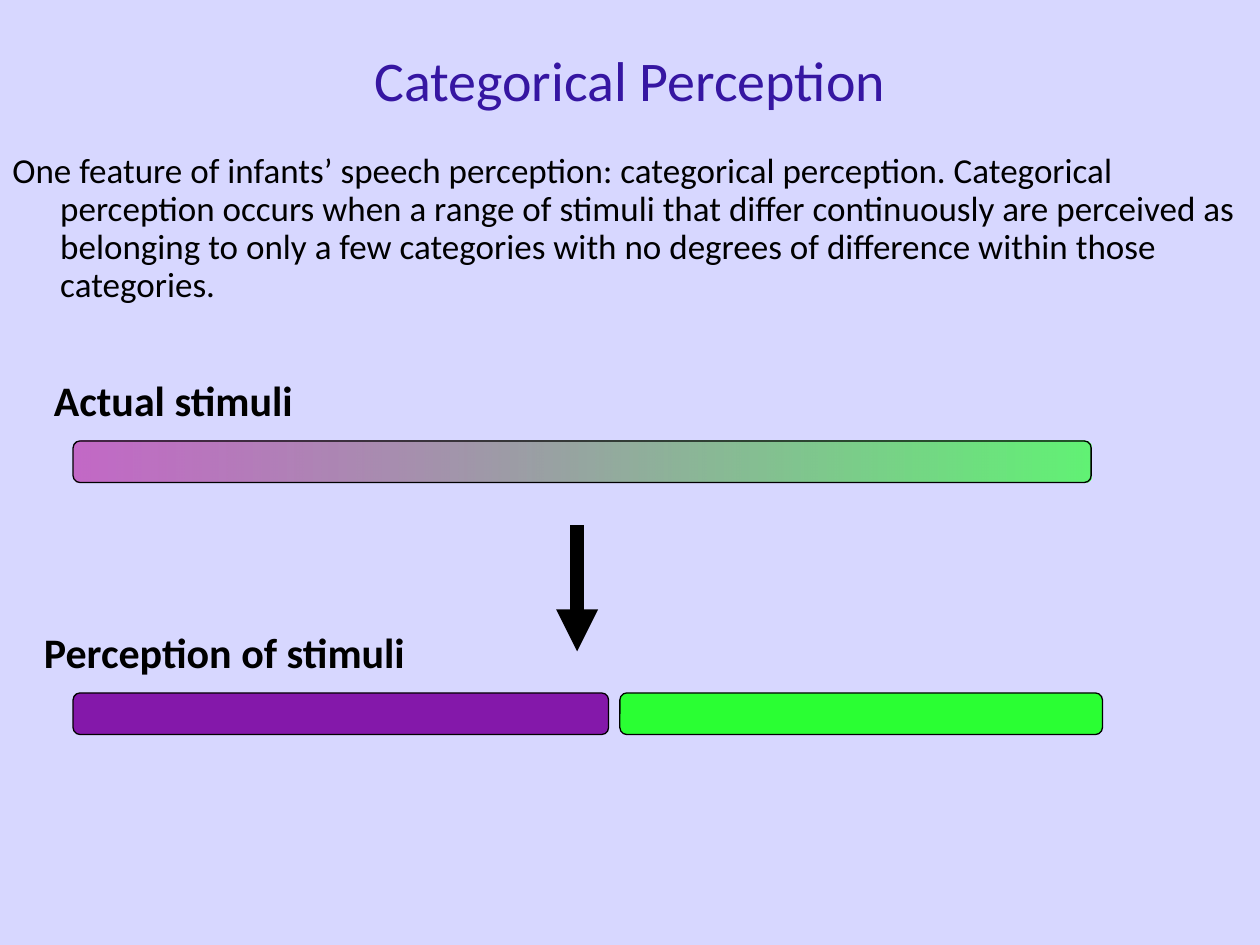
from pptx import Presentation
from pptx.dml.color import RGBColor
from pptx.enum.shapes import MSO_CONNECTOR as Connector, MSO_SHAPE as Shape
from pptx.enum.text import MSO_ANCHOR as Anchor, MSO_AUTO_SIZE as AutoSize, PP_ALIGN as Align
from pptx.oxml.ns import qn
from pptx.util import Inches, Pt
from lxml import etree


def color(value):
    return RGBColor.from_string(value)


def add_run(paragraph, text, size, text_color="000000", bold=False):
    run = paragraph.add_run()
    run.text = text
    run.font.name = "Calibri"
    run.font.size = Pt(size)
    run.font.bold = bold
    run.font.color.rgb = color(text_color)


presentation = Presentation()
presentation.slide_width = Inches(10)
presentation.slide_height = Inches(7.5)
slide = presentation.slides.add_slide(presentation.slide_layouts[5])
slide.background.fill.solid()
slide.background.fill.fore_color.rgb = color("D7D7FF")

# Title
title = slide.shapes.title
title.left, title.top = Inches(0.75), Inches(0)
title.width, title.height = Inches(8.5), Inches(1.25)
title.text_frame.vertical_anchor = Anchor.MIDDLE
paragraph = title.text_frame.paragraphs[0]
paragraph.alignment = Align.CENTER
add_run(paragraph, "Categorical Perception", 32, "3616A2")

# Definition with a hanging indent
definition = slide.shapes.add_textbox(Inches(0), Inches(1.17), Inches(10), Inches(1.75))
definition.text_frame.word_wrap = True
paragraph = definition.text_frame.paragraphs[0]
paragraph.line_spacing = 0.9
properties = paragraph._p.get_or_add_pPr()
properties.set("marL", str(Inches(0.38)))
properties.set("indent", str(-Inches(0.38)))
add_run(
    paragraph,
    "One feature of infants’ speech perception: categorical perception. "
    "Categorical perception occurs when a range of stimuli that differ continuously "
    "are perceived as belonging to only a few categories with no degrees of "
    "difference within those categories.",
    20,
)

# Stimulus bars: left, top, width, fill (None for the continuous range)
bars = [
    (0.58, 3.5, 8.08, None),
    (0.58, 5.5, 4.25, "8418AA"),
    (4.92, 5.5, 3.83, "2AFF33"),
]
range_stops = [("B3129A", 56), ("2AFF33", 68)]  # colour, opacity in percent
for left, top, width, fill_color in bars:
    bar = slide.shapes.add_shape(
        Shape.ROUNDED_RECTANGLE, Inches(left), Inches(top), Inches(width), Inches(0.33)
    )
    bar.shadow.inherit = False
    bar.line.color.rgb = color("000000")
    bar.line.width = Pt(0.75)
    if fill_color:
        bar.fill.solid()
        bar.fill.fore_color.rgb = color(fill_color)
        continue
    bar.fill.gradient()
    bar.fill.gradient_angle = 0
    for stop, (stop_color, _) in zip(bar.fill.gradient_stops, range_stops):
        stop.color.rgb = color(stop_color)
    gradient = bar.element.spPr.find(qn("a:gradFill"))
    for element, (_, opacity) in zip(gradient.iter(qn("a:srgbClr")), range_stops):
        etree.SubElement(element, qn("a:alpha")).set("val", str(opacity * 1000))

# Arrow from the stimuli to their perception
arrow = slide.shapes.add_connector(
    Connector.STRAIGHT, Inches(4.58), Inches(4.17), Inches(4.58), Inches(5.17)
)
arrow.line.color.rgb = color("000000")
arrow.line.width = Pt(8)
etree.SubElement(arrow.line._get_or_add_ln(), qn("a:tailEnd")).set("type", "triangle")
etree.SubElement(arrow.element.spPr, qn("a:effectLst"))

# Bar headings
for text, left, top, width in [
    ("Actual stimuli", 0.33, 2.92, 2.12),
    ("Perception of stimuli", 0.25, 4.92, 3.11),
]:
    heading = slide.shapes.add_textbox(Inches(left), Inches(top), Inches(width), Inches(0.5))
    heading.text_frame.word_wrap = False
    heading.text_frame.auto_size = AutoSize.SHAPE_TO_FIT_TEXT
    add_run(heading.text_frame.paragraphs[0], text, 24, bold=True)

presentation.save("out.pptx")
